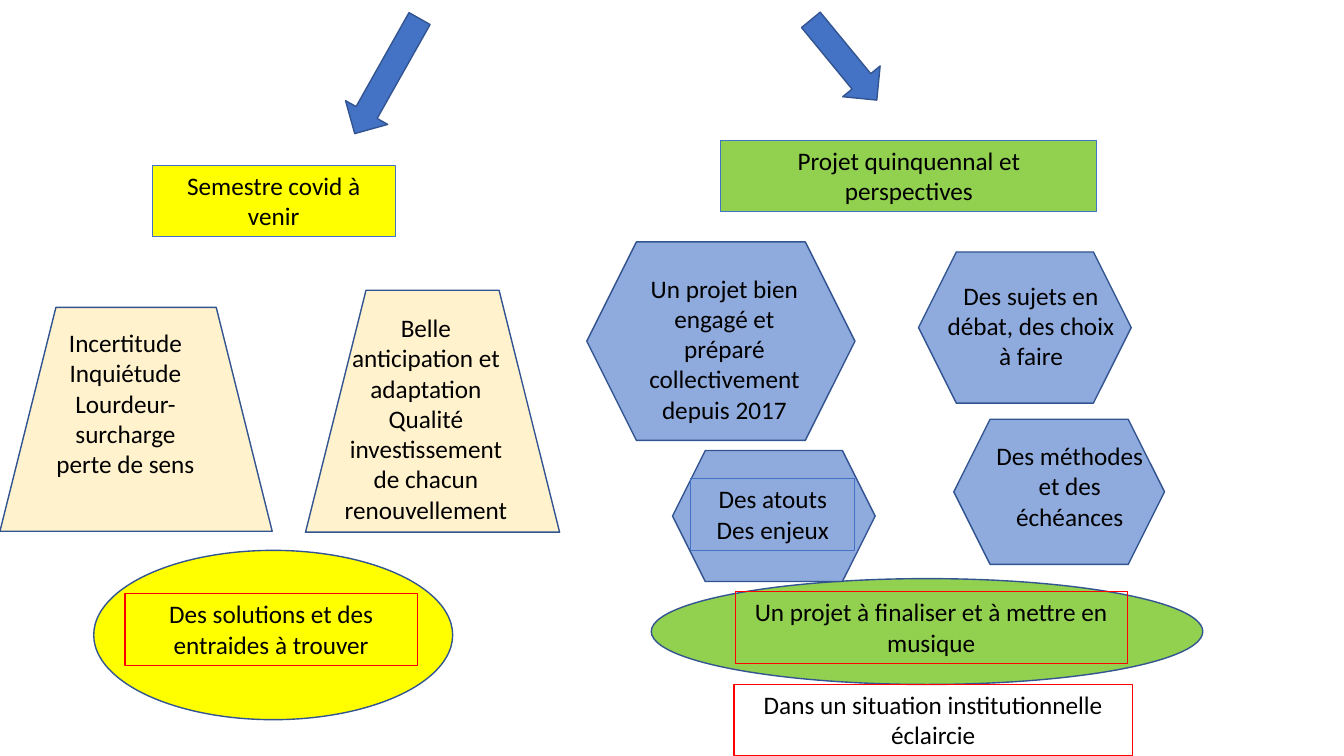
from pptx import Presentation
from pptx import util as u
from pptx.dml import color
from pptx.enum import shapes, text

COLORS = {
    "outline": "325491", "blue": "4472C4", "red": "FF0000", "ink": "000000",
    "periwinkle": "8FAADC", "yellow": "FFFF00", "green": "92D050", "cream": "FFF2CC",
}
KIND = shapes.MSO_SHAPE


def rgb(name):
    return color.RGBColor.from_string(COLORS[name])


def place(box):
    return [u.Inches(length) for length in box]


def add_figure(slide, kind, box, fill, rotation=0):
    figure = slide.shapes.add_shape(kind, *place(box))
    figure.shadow.inherit = False
    figure.rotation = rotation
    figure.fill.solid()
    figure.fill.fore_color.rgb = rgb(fill)
    figure.line.color.rgb = rgb("outline")
    figure.line.width = u.Pt(1)


def add_caption(slide, box, lines, border=None, fill=None):
    caption = slide.shapes.add_textbox(*place(box))
    if fill:
        caption.fill.solid()
        caption.fill.fore_color.rgb = rgb(fill)
    if border:
        caption.line.color.rgb = rgb(border)
        caption.line.width = u.Pt(0.75)
    frame = caption.text_frame
    frame.word_wrap = True
    for index, line in enumerate(lines):
        paragraph = frame.add_paragraph() if index else frame.paragraphs[0]
        paragraph.alignment = text.PP_ALIGN.CENTER
        run = paragraph.add_run()
        run.text = line
        run.font.name = "Calibri"
        run.font.size = u.Pt(18)
        run.font.color.rgb = rgb("ink")


def add_semester(slide):
    add_figure(slide, KIND.OVAL, (0.93, 5.46, 3.56, 1.68), "yellow")
    add_figure(slide, KIND.TRAPEZOID, (3.03, 2.88, 2.52, 2.4), "cream")
    add_figure(slide, KIND.TRAPEZOID, (0, 3.05, 2.7, 2.22), "cream")
    add_caption(slide, (1.51, 1.64, 2.41, 0.71), ["Semestre covid à venir"], "blue", "yellow")
    add_caption(slide, (0.33, 3.2, 1.83, 1.62),
                ["Incertitude", "Inquiétude", "Lourdeur- surcharge", "perte de sens"])
    add_caption(slide, (3.31, 3.05, 1.83, 2.22),
                ["Belle anticipation et adaptation", "Qualité investissement de chacun",
                 "renouvellement"])
    add_caption(slide, (1.24, 5.89, 2.9, 0.71),
                ["Des solutions et des entraides à trouver"], "red")


def add_project(slide):
    add_figure(slide, KIND.OVAL, (6.46, 5.74, 5.47, 1.05), "green")
    for box in ((6.67, 4.47, 2.01, 1.3), (9.46, 4.16, 2.09, 1.44),
                (9.11, 2.5, 2.11, 1.5), (5.82, 2.4, 2.66, 1.97)):
        add_figure(slide, KIND.HEXAGON, box, "periwinkle")
    add_caption(slide, (7.15, 1.39, 3.73, 0.71),
                ["Projet quinquennal et perspectives"], "blue", "green")
    add_caption(slide, (9.23, 2.73, 1.99, 1.01), ["Des sujets en débat, des choix à faire"])
    add_caption(slide, (6.22, 2.66, 1.93, 1.62),
                ["Un projet bien engagé et préparé collectivement depuis 2017"])
    add_caption(slide, (6.85, 4.75, 1.63, 0.71), ["Des atouts", "Des enjeux"], "blue")
    add_caption(slide, (9.67, 4.32, 1.88, 1.01), ["Des méthodes et des échéances"])
    add_caption(slide, (7.29, 5.87, 3.89, 0.71),
                ["Un projet à finaliser et à mettre en musique"], "red")
    add_caption(slide, (7.28, 6.79, 3.95, 0.71),
                ["Dans un situation institutionnelle éclaircie"], "red")


def main():
    deck = Presentation()
    deck.slide_width = u.Inches(13.33)
    deck.slide_height = u.Inches(7.5)
    slide = deck.slides.add_slide(deck.slide_layouts[6])
    add_semester(slide)
    add_project(slide)
    add_figure(slide, KIND.DOWN_ARROW, (3.6, 0.1, 0.48, 1.31), "blue", 29.4)
    add_figure(slide, KIND.DOWN_ARROW, (8.13, 0.08, 0.48, 1.03), "blue", 320.6)
    deck.save("out.pptx")


if __name__ == "__main__":
    main()
